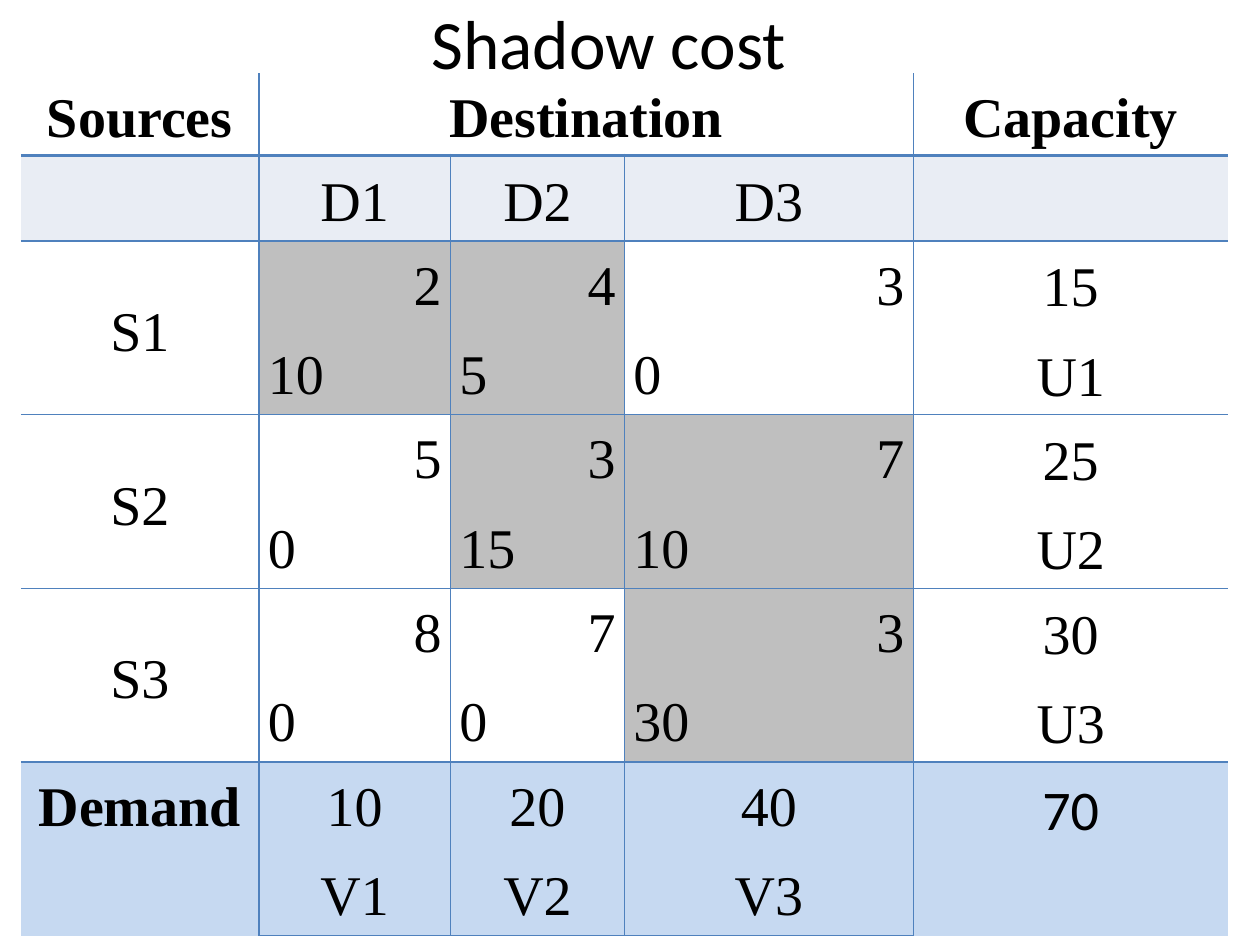
from dataclasses import dataclass

from lxml.etree import SubElement
from pptx import Presentation
from pptx.dml.color import RGBColor
from pptx.enum.text import MSO_ANCHOR, MSO_AUTO_SIZE, PP_ALIGN
from pptx.oxml import parse_xml
from pptx.oxml.ns import nsdecls, qn
from pptx.util import Cm, Pt


@dataclass(frozen=True)
class Theme:
    ink: str = "000000"
    line: str = "4F81BD"
    band: str = "E9EDF4"
    used: str = "BFBFBF"
    total: str = "C6D9F1"
    plain: str = "FFFFFF"
    head: str = "Calibri"
    body: str = "Times New Roman"
    big: float = 39.6
    size: float = 32
    thin: float = 1
    thick: float = 2.25


THEME = Theme()
LEFT, MID, RIGHT = PP_ALIGN.LEFT, PP_ALIGN.CENTER, PP_ALIGN.RIGHT
WIDTHS = [4.8, 3.86, 3.51, 5.82, 6.35]
HEIGHTS = [1.65, 1.73] + [3.5] * 4
LAST_ROW, LAST_COL = len(HEIGHTS) - 1, len(WIDTHS) - 1
INSETS = {"margin_left": Cm(0.18), "margin_right": Cm(0.18),
          "margin_top": Cm(0.1), "margin_bottom": Cm(0.1)}
SPACING = {"line_spacing": 1.15, "space_after": Pt(10)}

# Each source: name, (unit cost, amount) per destination, capacity, shadow cost
SOURCES = [
    ("S1", [(2, 10), (4, 5), (3, 0)], 15, "U1"),
    ("S2", [(5, 0), (3, 15), (7, 10)], 25, "U2"),
    ("S3", [(8, 0), (7, 0), (3, 30)], 30, "U3"),
]
DEMAND = [(10, "V1"), (20, "V2"), (40, "V3")]


def put(item, values):
    for name, value in values.items():
        setattr(item, name, value)


def style(font, face, size, bold=False):
    put(font, {"name": face, "size": Pt(size), "bold": bold})
    font.color.rgb = RGBColor.from_string(THEME.ink)


def write(cell, lines, aligns=(MID, MID), anchor=MSO_ANCHOR.TOP,
          bold=False, face=THEME.body):
    put(cell, {"vertical_anchor": anchor})
    frame = cell.text_frame
    frame.text = "\n".join(str(line) for line in lines)
    for para, align in zip(frame.paragraphs, aligns):
        put(para, {"alignment": align, **SPACING})
        style(para.runs[0].font, face, THEME.size, bold)


def paint(cell, color):
    cell.fill.solid()
    cell.fill.fore_color.rgb = RGBColor.from_string(color)


def edge(cell, sides):
    """Give the cell its borders; a width of 0 means no line."""
    props = cell._tc.get_or_add_tcPr()
    for spot, (side, width) in enumerate(sides.items()):
        line = parse_xml(f'<a:ln{side} {nsdecls("a")} w="{Pt(width)}"/>')
        if width:
            fill = SubElement(line, qn("a:solidFill"))
            SubElement(fill, qn("a:srgbClr"), val=THEME.line)
        else:
            SubElement(line, qn("a:noFill"))
        props.insert(spot, line)


def rule(cell, row, col):
    """Rule the inside of the grid, and the foot of the destinations."""
    end = col + (cell.span_width if cell.is_merge_origin else 1) - 1
    foot = row < LAST_ROW or 0 < col < LAST_COL
    edge(cell, {
        "L": THEME.thin if col else 0,
        "R": THEME.thin if end < LAST_COL else 0,
        "T": (0, THEME.thick)[row] if row < 2 else THEME.thin,
        "B": THEME.thick if row == 0 else THEME.thin if foot else 0,
    })


def add_title(slide, text):
    title = slide.shapes.title
    put(title, {"left": Cm(0.42), "top": Cm(-0.2),
                "width": Cm(23.7), "height": Cm(2.1)})
    frame = title.text_frame
    put(frame, {"text": text, "word_wrap": True,
                "auto_size": MSO_AUTO_SIZE.NONE,
                "vertical_anchor": MSO_ANCHOR.MIDDLE})
    para = frame.paragraphs[0]
    para.alignment = MID
    style(para.runs[0].font, THEME.head, THEME.big)


def add_grid(slide):
    frame = slide.shapes.add_table(
        len(HEIGHTS), len(WIDTHS), Cm(0.42), Cm(1.48),
        Cm(sum(WIDTHS)), Cm(sum(HEIGHTS)))
    grid = frame.table
    put(grid, {"first_row": False, "horz_banding": False})
    for col, width in zip(grid.columns, WIDTHS):
        col.width = Cm(width)
    for row, height in zip(grid.rows, HEIGHTS):
        row.height = Cm(height)
    grid.cell(0, 1).merge(grid.cell(0, 3))
    fills = {1: THEME.band, LAST_ROW: THEME.total}
    for row in range(len(HEIGHTS)):
        for col in range(len(WIDTHS)):
            cell = grid.cell(row, col)
            put(cell, INSETS)
            paint(cell, fills.get(row, THEME.plain))
            if not cell.is_spanned:
                rule(cell, row, col)
    return grid


def fill_head(grid):
    middle = MSO_ANCHOR.MIDDLE
    for col, text in {0: "Sources", 1: "Destination", 4: "Capacity"}.items():
        write(grid.cell(0, col), [text], anchor=middle, bold=True)
    for col in range(1, LAST_COL):
        write(grid.cell(1, col), [f"D{col}"], anchor=middle)


def fill_source(grid, row, name, routes, supply, shadow):
    middle = MSO_ANCHOR.MIDDLE
    write(grid.cell(row, 0), [name], anchor=middle)
    for col, (cost, amount) in enumerate(routes, 1):
        cell = grid.cell(row, col)
        write(cell, [cost, amount], (RIGHT, LEFT))
        if amount:
            paint(cell, THEME.used)
    write(grid.cell(row, LAST_COL), [supply, shadow], anchor=middle)


def fill_demand(grid):
    write(grid.cell(LAST_ROW, 0), ["Demand"], bold=True)
    for col, lines in enumerate(DEMAND, 1):
        write(grid.cell(LAST_ROW, col), lines)
    total = sum(need for need, _ in DEMAND)
    write(grid.cell(LAST_ROW, LAST_COL), [total], face=THEME.head)


def main():
    deck = Presentation()
    put(deck, {"slide_width": Cm(25.4), "slide_height": Cm(19.05)})
    slide = deck.slides.add_slide(deck.slide_layouts[5])
    # Title
    add_title(slide, "Shadow cost")
    # Transport table
    grid = add_grid(slide)
    fill_head(grid)
    for row, source in enumerate(SOURCES, 2):
        fill_source(grid, row, *source)
    fill_demand(grid)
    deck.save("out.pptx")


if __name__ == "__main__":
    main()
